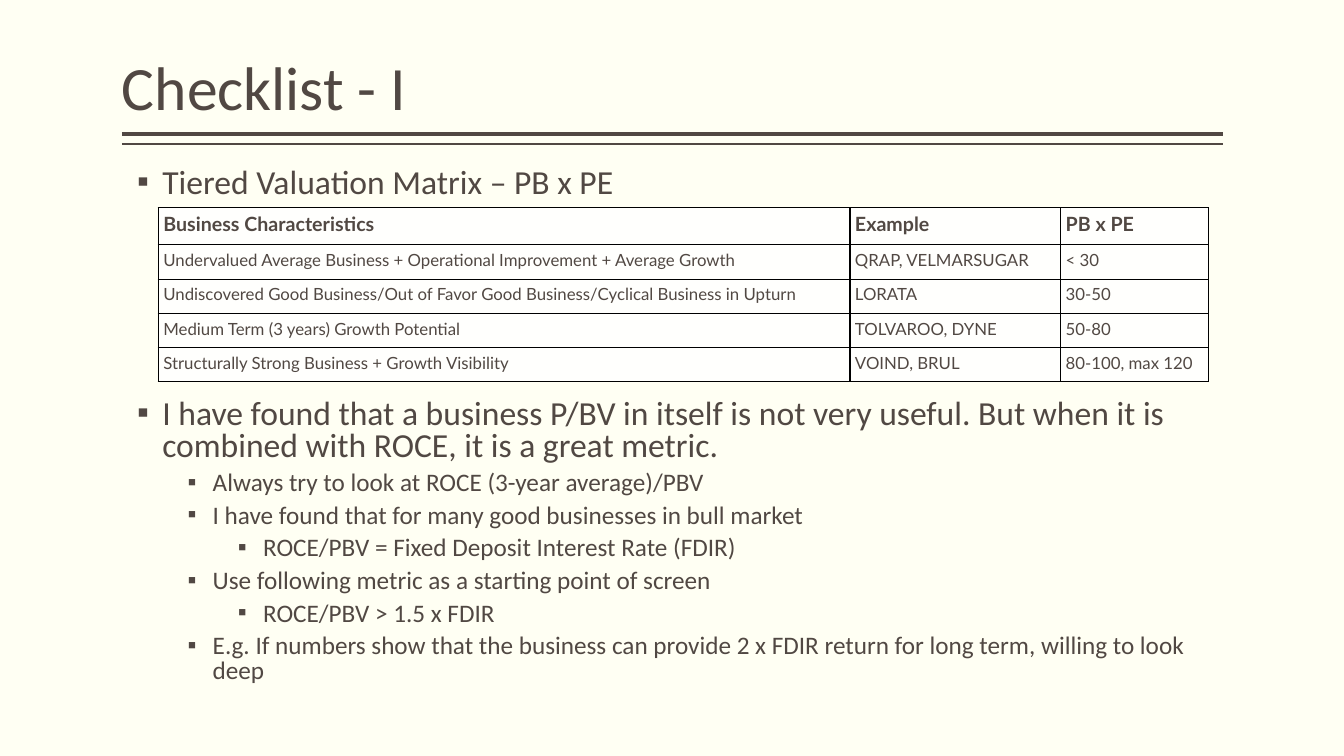
from pptx import Presentation
from pptx import util as u
from pptx.dml.color import RGBColor
from pptx.enum import shapes, text
from pptx.oxml.ns import qn
from lxml import etree

HUES = {"page": "FFFFF3", "ink": "514843", "cell": "FFFFFF", "edge": "000000"}


def style(para, face, size, bold=False):
    font = para.font
    font.name, font.size, font.bold = face, u.Pt(size), bold
    font.color.rgb = RGBColor.from_string(HUES["ink"])


def place(shape, left, top, width, height):
    shape.left, shape.top = u.Inches(left), u.Inches(top)
    shape.width, shape.height = u.Inches(width), u.Inches(height)


deck = Presentation()
deck.slide_width, deck.slide_height = u.Inches(13.33), u.Inches(7.5)
slide = deck.slides.add_slide(deck.slide_layouts[1])
slide.background.fill.solid()
slide.background.fill.fore_color.rgb = RGBColor.from_string(HUES["page"])

# Double rule under the title
for y, weight in ((1.33, 3), (1.43, 1)):
    rule = slide.shapes.add_connector(
        shapes.MSO_CONNECTOR.STRAIGHT,
        u.Inches(1.21), u.Inches(y), u.Inches(12.13), u.Inches(y))
    rule.line.color.rgb = RGBColor.from_string(HUES["ink"])
    rule.line.width = u.Pt(weight)
    etree.SubElement(rule.element.spPr, qn("a:effectLst"))

title, body = slide.placeholders
place(title, 1.21, 0.08, 10.92, 1.2)
place(body, 1.36, 1.62, 10.92, 5.34)
for holder, anchor in ((title, text.MSO_ANCHOR.BOTTOM), (body, text.MSO_ANCHOR.TOP)):
    frame = holder.text_frame
    frame.margin_left = frame.margin_right = 0
    frame.vertical_anchor = anchor
    frame.auto_size = text.MSO_AUTO_SIZE.NONE
    frame.word_wrap = True

title.text_frame.text = "Checklist - I"
head = title.text_frame.paragraphs[0]
head.alignment = text.PP_ALIGN.LEFT
head.line_spacing = 0.9
style(head, "Calibri", 44)

# Level, space before, wording; the second point clears the table
points = [
    (0, 18, "Tiered Valuation Matrix – PB x PE"),
    (0, 142, "I have found that a business P/BV in itself is not very useful. "
             "But when it is combined with ROCE, it is a great metric."),
    (1, 6, "Always try to look at ROCE (3-year average)/PBV"),
    (1, 6, "I have found that for many good businesses in bull market"),
    (2, 6, "ROCE/PBV = Fixed Deposit Interest Rate (FDIR)"),
    (1, 6, "Use following metric as a starting point of screen"),
    (2, 6, "ROCE/PBV > 1.5 x FDIR"),
    (1, 6, "E.g. If numbers show that the business can provide 2 x FDIR "
           "return for long term, willing to look deep"),
]
body.text_frame.text = "\n".join(words for _, _, words in points)
for para, (level, gap, _) in zip(body.text_frame.paragraphs, points):
    para.level = level
    props = para._p.get_or_add_pPr()
    props.set("marL", str(u.Inches(0.25 + 0.5 * level)))
    props.set("indent", str(u.Inches(-0.25)))
    etree.SubElement(props, qn("a:buChar"), char="▪")
    para.line_spacing = 0.8
    para.space_before = u.Pt(gap)
    style(para, "Calibri", 18 if level else 24)

# Valuation matrix
rows = [
    ("Business Characteristics", "Example", "PB x PE"),
    ("Undervalued Average Business + Operational Improvement + Average Growth",
     "QRAP, VELMARSUGAR", "< 30"),
    ("Undiscovered Good Business/Out of Favor Good Business/Cyclical Business in Upturn",
     "LORATA", "30-50"),
    ("Medium Term (3 years) Growth Potential", "TOLVAROO, DYNE", "50-80"),
    ("Structurally Strong Business + Growth Visibility", "VOIND, BRUL", "80-100, max 120"),
]
grid = slide.shapes.add_table(
    len(rows), 3, u.Inches(1.57), u.Inches(2.06), u.Inches(10.42), u.Inches(1.73)).table
grid.first_row = grid.horz_banding = False
for col, width in zip(grid.columns, (6.86, 2.09, 1.47)):
    col.width = u.Inches(width)
for r, row in enumerate(rows):
    grid.rows[r].height = u.Inches(0.34 if r else 0.37)
    for c, words in enumerate(row):
        cell = grid.cell(r, c)
        cell.text = words
        cell.margin_left = cell.margin_right = u.Inches(0.05)
        style(cell.text_frame.paragraphs[0], "Lato", 12 if r else 14, r == 0)
        cell.fill.solid()
        cell.fill.fore_color.rgb = RGBColor.from_string(HUES["cell"])
        props = cell._tc.tcPr
        etree.SubElement(props.find(".//" + qn("a:srgbClr")), qn("a:alpha"), val="85000")
        for i, side in enumerate(("lnL", "lnR", "lnT", "lnB")):
            edge = etree.Element(qn("a:" + side), w=str(u.Pt(1)))
            fill = etree.SubElement(edge, qn("a:solidFill"))
            etree.SubElement(fill, qn("a:srgbClr"), val=HUES["edge"])
            props.insert(i, edge)

deck.save("out.pptx")
